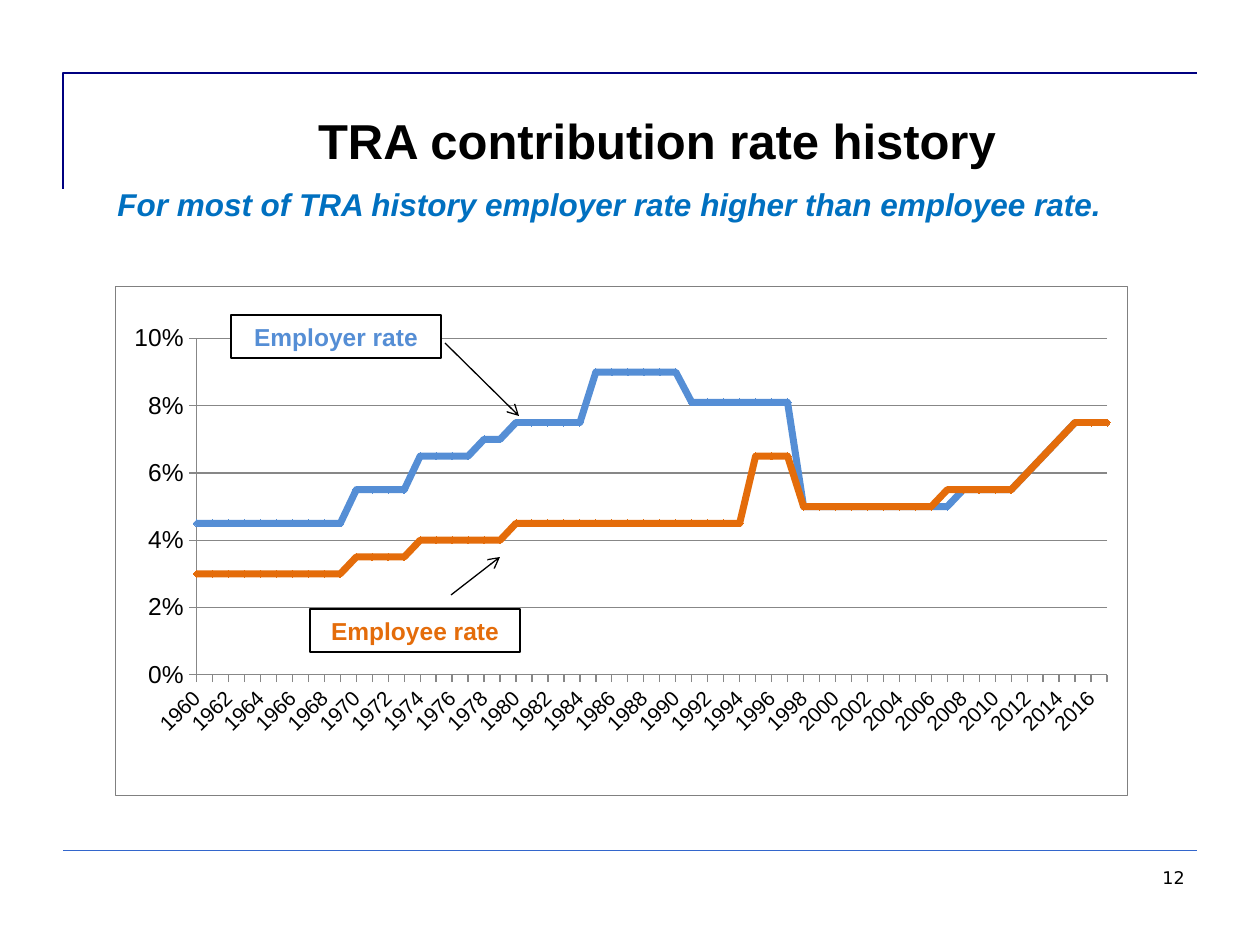
from dataclasses import dataclass

import lxml.etree
import pptx
import pptx.chart.data
import pptx.dml.color
import pptx.enum.chart
import pptx.enum.shapes
import pptx.enum.text
import pptx.oxml
import pptx.util

PX = 914400 / 126
BLUE, ORANGE, GREY = "558ED5", "E46C0A", "878787"
ALIGN = pptx.enum.text.PP_ALIGN
ANCHOR = pptx.enum.text.MSO_ANCHOR
TICK = pptx.enum.chart.XL_TICK_MARK


@dataclass
class Label:
    text: str
    box: tuple[int, int, int, int]
    color: str
    size: int
    align: int = ALIGN.CENTER
    bold: bool = True
    italic: bool = False
    font: str = "Arial"
    wrap: bool = True
    after: int = 0
    boxed: bool = False


@dataclass
class Rule:
    start: tuple[int, int]
    end: tuple[int, int]
    color: str = "000000"
    width: float = 0.75
    arrow: bool = False


@dataclass
class Rate:
    name: str
    color: str
    runs: list[tuple[float, int]]

    def values(self) -> list[float]:
        return [rate for rate, years in self.runs for _ in range(years)]


TEXTS = [
    Label("12", (903, 861, 294, 63), "000000", 10, ALIGN.RIGHT, False, font="DejaVu Sans"),
    Label("TRA contribution rate history", (300, 104, 714, 72), "000000", 28, wrap=False),
    Label("For most of TRA history employer rate higher than employee rate.",
          (105, 179, 1102, 51), "0070C0", 18, ALIGN.LEFT, italic=True, after=12),
]
CALLOUTS = [
    Label("Employer rate", (231, 315, 210, 43), BLUE, 14, boxed=True),
    Label("Employee rate", (310, 609, 210, 43), ORANGE, 14, boxed=True),
]
ARROWS = [
    Rule((451, 595), (500, 557), arrow=True),
    Rule((445, 343), (519, 416), arrow=True),
]
RATES = [
    Rate("Employer rate", BLUE, [
        (0.045, 10), (0.055, 4), (0.065, 4), (0.07, 2), (0.075, 5), (0.09, 6), (0.081, 7),
        (0.05, 10), (0.055, 4), (0.06, 1), (0.065, 1), (0.07, 1), (0.075, 3)]),
    Rate("Employee rate", ORANGE, [
        (0.03, 10), (0.035, 4), (0.04, 6), (0.045, 15), (0.065, 3), (0.05, 9),
        (0.055, 5), (0.06, 1), (0.065, 1), (0.07, 1), (0.075, 3)]),
]


def px(n: float) -> int:
    return round(n * PX)


def rgb(color: str) -> pptx.dml.color.RGBColor:
    return pptx.dml.color.RGBColor.from_string(color)


def assign(obj, values: dict) -> None:
    for name, value in values.items():
        setattr(obj, name, value)


def style_line(line, color: str, width: float) -> None:
    line.color.rgb = rgb(color)
    line.width = pptx.util.Pt(width)


def style_font(font, size: float, color: str, name: str = "Arial",
               bold: bool = False, italic: bool = False) -> None:
    assign(font, {"size": pptx.util.Pt(size), "name": name, "bold": bold, "italic": italic})
    font.color.rgb = rgb(color)


def add_label(s, label: Label) -> None:
    box = map(px, label.box)
    if label.boxed:
        sp = s.shapes.add_shape(pptx.enum.shapes.MSO_SHAPE.RECTANGLE, *box)
        sp.shadow.inherit = False
        sp.fill.solid()
        sp.fill.fore_color.rgb = rgb("FFFFFF")
        style_line(sp.line, "000000", 0.75)
    else:
        sp = s.shapes.add_textbox(*box)
    tf = sp.text_frame
    assign(tf, {"word_wrap": label.wrap,
                "vertical_anchor": ANCHOR.MIDDLE if label.boxed else ANCHOR.TOP})
    p = tf.paragraphs[0]
    assign(p, {"alignment": label.align, "space_after": pptx.util.Pt(label.after)})
    r = p.add_run()
    r.text = label.text
    style_font(r.font, label.size, label.color, label.font, label.bold, label.italic)


def add_rule(s, rule: Rule) -> None:
    sp = s.shapes.add_connector(pptx.enum.shapes.MSO_CONNECTOR.STRAIGHT,
                                *map(px, rule.start + rule.end))
    style_line(sp.line, rule.color, rule.width)
    props = sp._element.spPr
    if rule.arrow:
        ln = sp.line._get_or_add_ln()
        lxml.etree.SubElement(ln, pptx.oxml.ns.qn("a:tailEnd"), type="arrow")
    lxml.etree.SubElement(props, pptx.oxml.ns.qn("a:effectLst"))


def add_frame(s) -> None:
    builder = s.shapes.build_freeform(px(63), px(189))
    builder.add_line_segments([(px(63), px(73)), (px(1197), px(73))], close=False)
    sp = builder.convert_to_shape()
    sp.shadow.inherit = False
    sp.fill.background()
    style_line(sp.line, "000080", 1.5)


def chart_xml(xml: str):
    return pptx.oxml.parse_xml(xml.replace("NS", pptx.oxml.ns.nsdecls("c", "a"), 1))


def style_space(chart) -> None:
    space = chart._chartSpace
    if not space.xpath("c:roundedCorners"):
        space.xpath("c:date1904")[0].addnext(chart_xml('<c:roundedCorners NS val="0"/>'))
    space.xpath("c:chart")[0].addnext(chart_xml(
        '<c:spPr NS><a:noFill/><a:ln w="9525"><a:solidFill><a:srgbClr val="808080"/>'
        '</a:solidFill></a:ln></c:spPr>'))
    plot_area = space.xpath("c:chart/c:plotArea")[0]
    for old in plot_area.xpath("c:layout"):
        plot_area.remove(old)
    place = {"layoutTarget": "inner", "xMode": "edge", "yMode": "edge",
             "x": 0.08, "y": 0.102, "w": 0.9, "h": 0.661}
    items = "".join(f'<c:{name} val="{value}"/>' for name, value in place.items())
    plot_area.insert(0, chart_xml(
        f"<c:layout NS><c:manualLayout>{items}</c:manualLayout></c:layout>"))


def start_on_axis(rates) -> None:
    axis = rates._element
    for old in axis.xpath("c:crossBetween"):
        axis.remove(old)
    axis.xpath("c:crosses")[0].addnext(chart_xml('<c:crossBetween NS val="midCat"/>'))


def add_rate_chart(s) -> None:
    data = pptx.chart.data.CategoryChartData(number_format="0.0%")
    data.categories = [str(year) for year in range(1960, 2018)]
    for rate in RATES:
        data.add_series(rate.name, rate.values())
    chart = s.shapes.add_chart(pptx.enum.chart.XL_CHART_TYPE.LINE_MARKERS,
                               *map(px, (115, 286, 1013, 510)), data).chart
    assign(chart, {"has_legend": False, "has_title": False})
    style_font(chart.font, 18, "000000", "DejaVu Sans")
    style_space(chart)
    for axis, size in ((chart.category_axis, 12), (chart.value_axis, 14)):
        assign(axis, {"major_tick_mark": TICK.OUTSIDE, "minor_tick_mark": TICK.NONE})
        style_font(axis.tick_labels.font, size, "000000")
        style_line(axis.format.line, GREY, 0.75)
    years, rates = chart.category_axis, chart.value_axis
    years._element.xpath("c:txPr/a:bodyPr")[0].set("rot", "-2700000")
    years._element.xpath("c:noMultiLvlLbl")[0].addprevious(
        chart_xml('<c:tickLblSkip NS val="2"/>'))
    start_on_axis(rates)
    assign(rates, {"minimum_scale": 0, "maximum_scale": 0.1, "major_unit": 0.02,
                   "has_major_gridlines": True})
    assign(rates.tick_labels, {"number_format": "0%", "number_format_is_linked": False})
    style_line(rates.major_gridlines.format.line, GREY, 0.75)
    for series, rate in zip(chart.plots[0].series, RATES):
        series.smooth = False
        style_line(series.format.line, rate.color, 4)
        assign(series.marker, {"style": pptx.enum.chart.XL_MARKER_STYLE.DIAMOND, "size": 4})
        series.marker.format.fill.solid()
        series.marker.format.fill.fore_color.rgb = rgb(rate.color)
        style_line(series.marker.format.line, rate.color, 0.75)


def main() -> None:
    prs = pptx.Presentation()
    assign(prs, {"slide_width": px(1260), "slide_height": px(945)})
    s = prs.slides.add_slide(prs.slide_layouts[6])
    add_frame(s)
    add_rule(s, Rule((63, 850), (1197, 850), "3366CC", 0.25))
    add_rate_chart(s)
    for label in TEXTS + CALLOUTS:
        add_label(s, label)
    for arrow in ARROWS:
        add_rule(s, arrow)
    prs.save("out.pptx")


if __name__ == "__main__":
    main()
